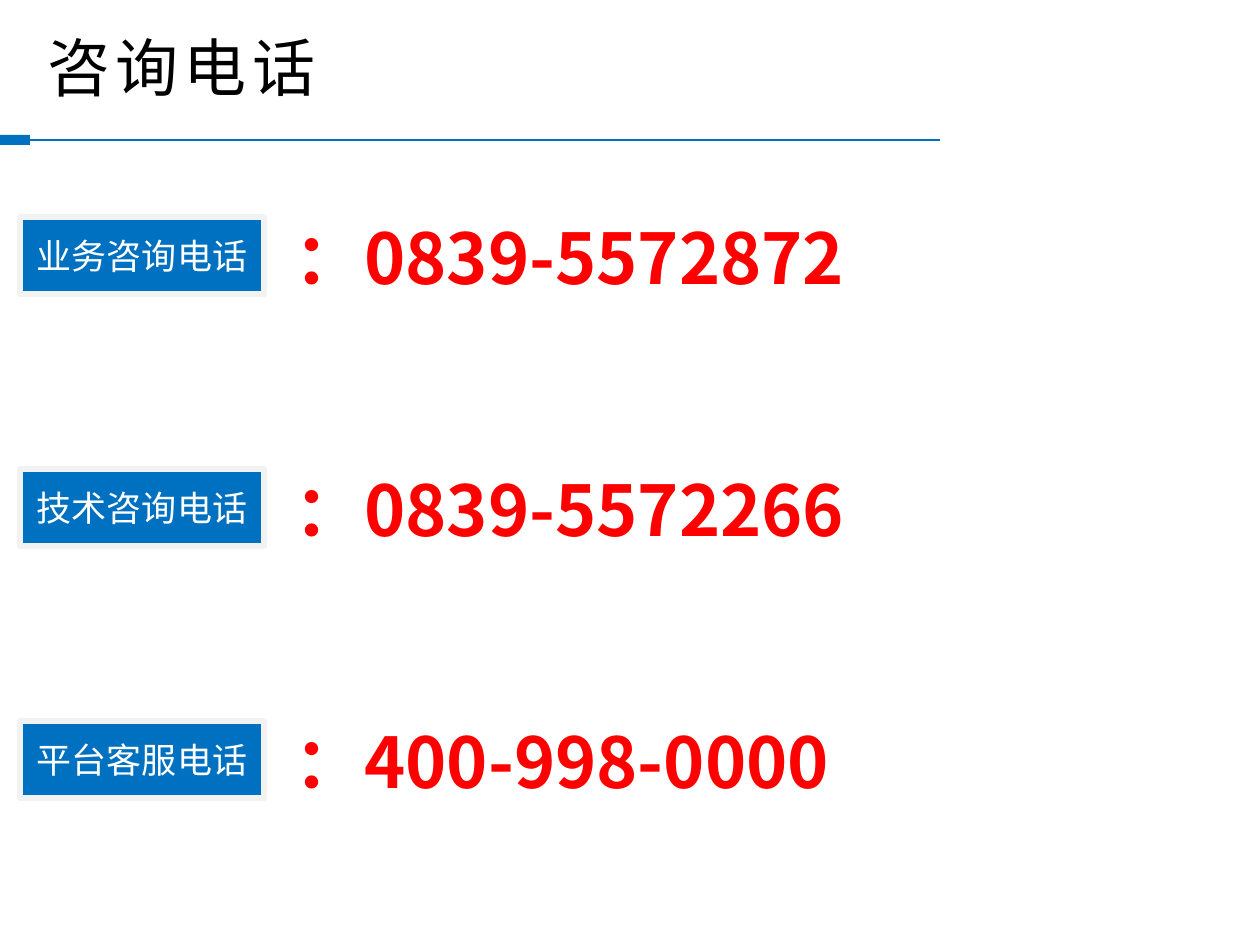
from lxml.etree import SubElement
from pptx import Presentation
from pptx.dml.color import RGBColor
from pptx.enum.shapes import MSO_CONNECTOR, MSO_SHAPE
from pptx.enum.text import MSO_ANCHOR, PP_ALIGN
from pptx.oxml.ns import qn
from pptx.util import Emu, Pt

FONT = "Noto Sans CJK SC"
BLUE = "0070C0"
CONTACTS = [
    ("业务咨询电话", "：0839-5572872"),
    ("技术咨询电话", "：0839-5572266"),
    ("平台客服电话", "：400-998-0000"),
]


def px(n):
    return Emu(round(n * 914400 / 126))


def color(value):
    return RGBColor.from_string(value)


def add_run(p, text, size, fill, bold=False):
    r = p.add_run()
    r.text = text
    r.font.size = Pt(size)
    r.font.bold = bold
    r.font.name = FONT
    r.font.color.rgb = color(fill)
    rPr = r.font._element
    SubElement(rPr, qn("a:ea")).set("typeface", FONT)
    return rPr


def add_rect(s, x, y, w, h, border=None):
    sp = s.shapes.add_shape(MSO_SHAPE.RECTANGLE, px(x), px(y), px(w), px(h))
    sp.shadow.inherit = False
    sp.fill.solid()
    sp.fill.fore_color.rgb = color(BLUE)
    if border:
        sp.line.color.rgb = color(border)
        sp.line.width = Pt(3.15)
    else:
        sp.line.fill.background()
    return sp


def add_header(s, x, y, w, h):
    line_y = y + h - 5
    line = s.shapes.add_connector(
        MSO_CONNECTOR.STRAIGHT, px(x + w), px(line_y), px(x + 25), px(line_y))
    line.line.color.rgb = color(BLUE)
    line.line.width = Pt(0.9)
    SubElement(line._element.spPr, qn("a:effectLst"))
    add_rect(s, x, line_y - 5, 30, 10)
    title = s.shapes.title
    title.left, title.top = px(x + 35), px(y + 21)
    title.width, title.height = px(864), px(90)
    tf = title.text_frame
    tf.vertical_anchor = MSO_ANCHOR.MIDDLE
    p = tf.paragraphs[0]
    p.alignment = PP_ALIGN.LEFT
    add_run(p, "咨询电话", 36, "000000").set("spc", "300")


def add_label(s, x, y, w, h, text):
    tf = add_rect(s, x, y, w, h, "F2F2F2").text_frame
    tf.word_wrap = True
    tf.vertical_anchor = MSO_ANCHOR.MIDDLE
    p = tf.paragraphs[0]
    p.alignment = PP_ALIGN.CENTER
    add_run(p, text, 20, "FFFFFF")


def add_numbers(s, x, y, w, h, numbers):
    tf = s.shapes.add_textbox(px(x), px(y), px(w), px(h)).text_frame
    tf.word_wrap = True
    for i, number in enumerate(numbers):
        p = tf.paragraphs[0] if i == 0 else tf.add_paragraph()
        p.line_spacing = Pt(48)
        p.space_before = Pt(96 if i else 0)
        add_run(p, number, 40, "FF0000", bold=True)


def add_contacts(s, x, y, w, h):
    labels, numbers = zip(*CONTACTS)
    pitch = 252
    for i, label in enumerate(labels):
        add_label(s, x, y + 14 + i * pitch, 244, 77, label)
    add_numbers(s, x + 262, y + 5, w - 262, h, numbers)


def main():
    prs = Presentation()
    prs.slide_width, prs.slide_height = px(1260), px(945)
    s = prs.slides.add_slide(prs.slide_layouts[5])
    add_header(s, 0, 0, 940, 145)
    add_contacts(s, 20, 203, 1076, 606)
    prs.save("out.pptx")


if __name__ == "__main__":
    main()
